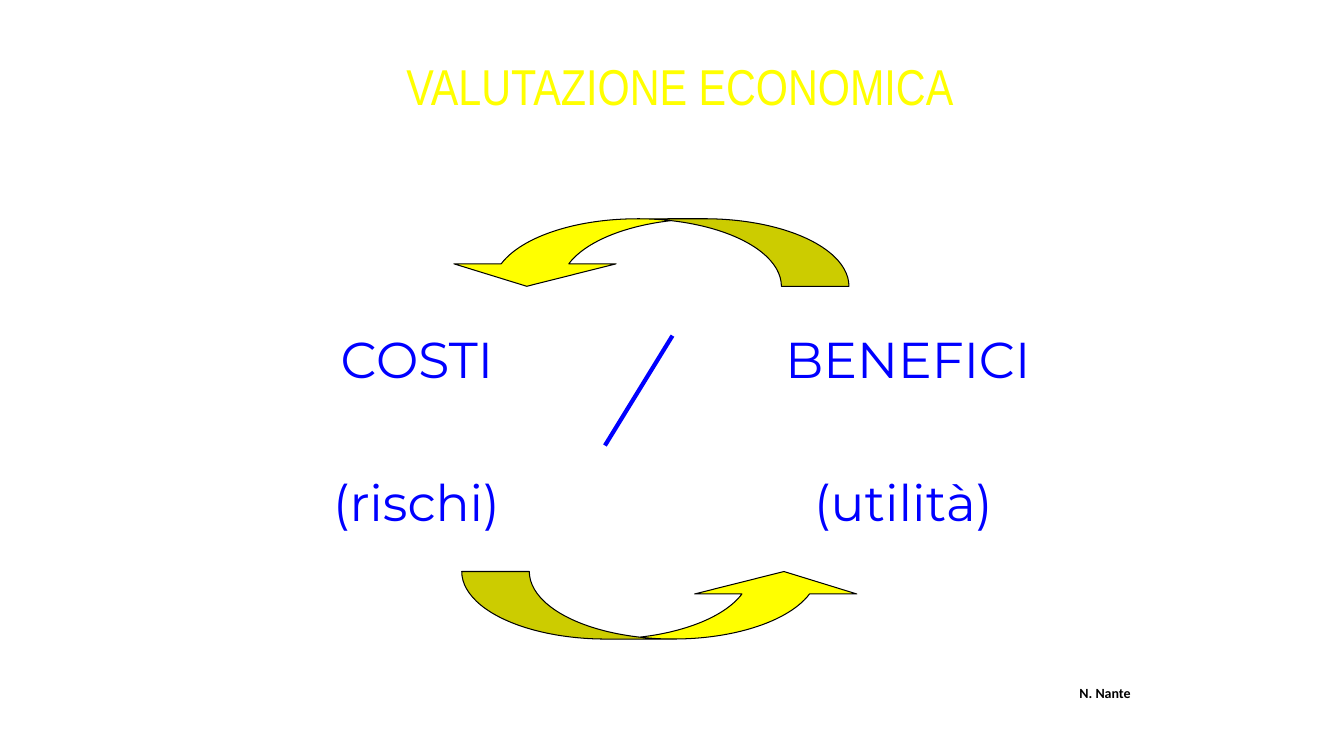
from dataclasses import dataclass

from lxml.etree import SubElement
from pptx import Presentation
from pptx.dml.color import RGBColor
from pptx.enum.shapes import MSO_CONNECTOR, MSO_SHAPE
from pptx.enum.text import MSO_ANCHOR, MSO_AUTO_SIZE, PP_ALIGN
from pptx.oxml.ns import qn
from pptx.util import Inches, Pt

BLUE, GOLD, BLACK = "0000FF", "FFFF00", "000000"


@dataclass
class Label:
    text: str
    left: float
    top: float
    width: float
    height: float
    font: str = "Montserrat"
    size: int = 36
    color: str = BLUE
    bold: bool = False


@dataclass
class Arrow:
    left: float
    top: float
    turn: int


TITLE = Label("VALUTAZIONE ECONOMICA", 2.58, 0.5, 8.33, 1, "Arial Narrow", 36, GOLD)
LABELS = [
    Label("COSTI", 2.83, 3.21, 2.61, 1.27),
    Label("BENEFICI", 7.17, 3.21, 3.67, 1.27),
    Label("(rischi)", 3.17, 4.62, 1.92, 0.71),
    Label("(utilità)", 8, 4.62, 1.92, 0.71),
    Label("N. Nante", 10.6, 6.74, 0.72, 0.27, "Calibri", 10, BLACK, True),
]
ARROWS = [Arrow(4.58, 5.67, 0), Arrow(4.42, 2.17, 180)]


def paint(target, color: str) -> None:
    """Give a fill a solid colour."""
    target.solid()
    target.fore_color.rgb = RGBColor.from_string(color)


def write(box, label: Label) -> None:
    """Place a box and set its one centred line."""
    box.left, box.top = Inches(label.left), Inches(label.top)
    box.width, box.height = Inches(label.width), Inches(label.height)
    frame = box.text_frame
    frame.word_wrap = False
    frame.auto_size = MSO_AUTO_SIZE.NONE
    frame.vertical_anchor = MSO_ANCHOR.TOP
    para = frame.paragraphs[0]
    para.alignment = PP_ALIGN.CENTER
    run = para.add_run()
    run.text = label.text
    run.font.name = label.font
    run.font.size = Pt(label.size)
    run.font.bold = label.bold
    paint(run.font.fill, label.color)


def draw_arrow(slide, arrow: Arrow) -> None:
    """Draw a curved arrow."""
    shape = slide.shapes.add_shape(
        MSO_SHAPE.CURVED_UP_ARROW,
        Inches(arrow.left), Inches(arrow.top), Inches(4), Inches(0.67))
    for index, value in enumerate((1.2, 2.4, 0.333)):
        shape.adjustments[index] = value
    shape.rotation = arrow.turn
    shape.shadow.inherit = False
    paint(shape.fill, GOLD)
    paint(shape.line.fill, BLACK)
    shape.line.width = Pt(0.75)


def draw_slash(slide) -> None:
    """Draw the stroke between costs and benefits."""
    slash = slide.shapes.add_connector(
        MSO_CONNECTOR.STRAIGHT,
        Inches(6.67), Inches(3.33), Inches(6), Inches(4.42))
    paint(slash.line.fill, BLUE)
    slash.line.width = Pt(3)
    SubElement(slash._element.spPr, qn("a:effectLst"))


def main() -> None:
    deck = Presentation()
    deck.slide_width, deck.slide_height = Inches(13.33), Inches(7.5)
    slide = deck.slides.add_slide(deck.slide_layouts[5])

    # Title
    write(slide.shapes.title, TITLE)

    # Terms of the ratio and author
    for label in LABELS:
        write(slide.shapes.add_textbox(0, 0, 0, 0), label)

    # Arrows and slash
    for arrow in ARROWS:
        draw_arrow(slide, arrow)
    draw_slash(slide)

    deck.save("out.pptx")


if __name__ == "__main__":
    main()
